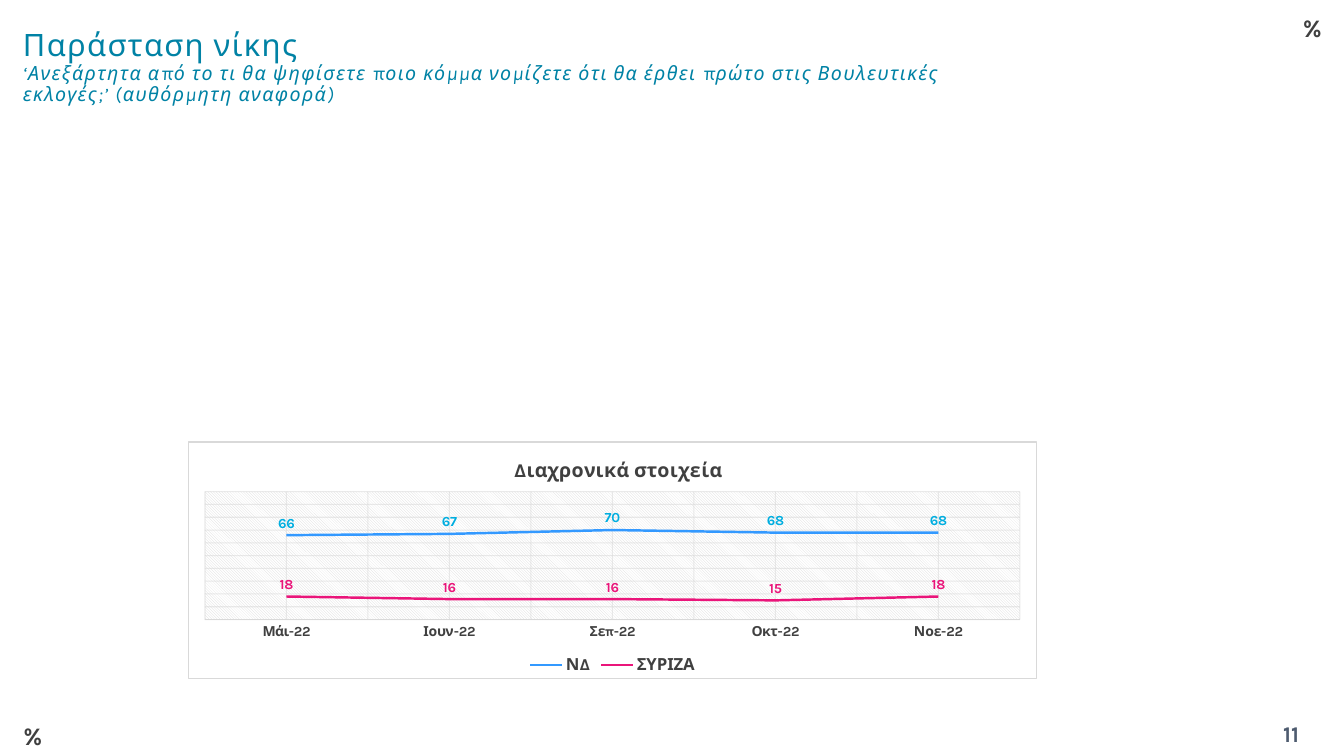
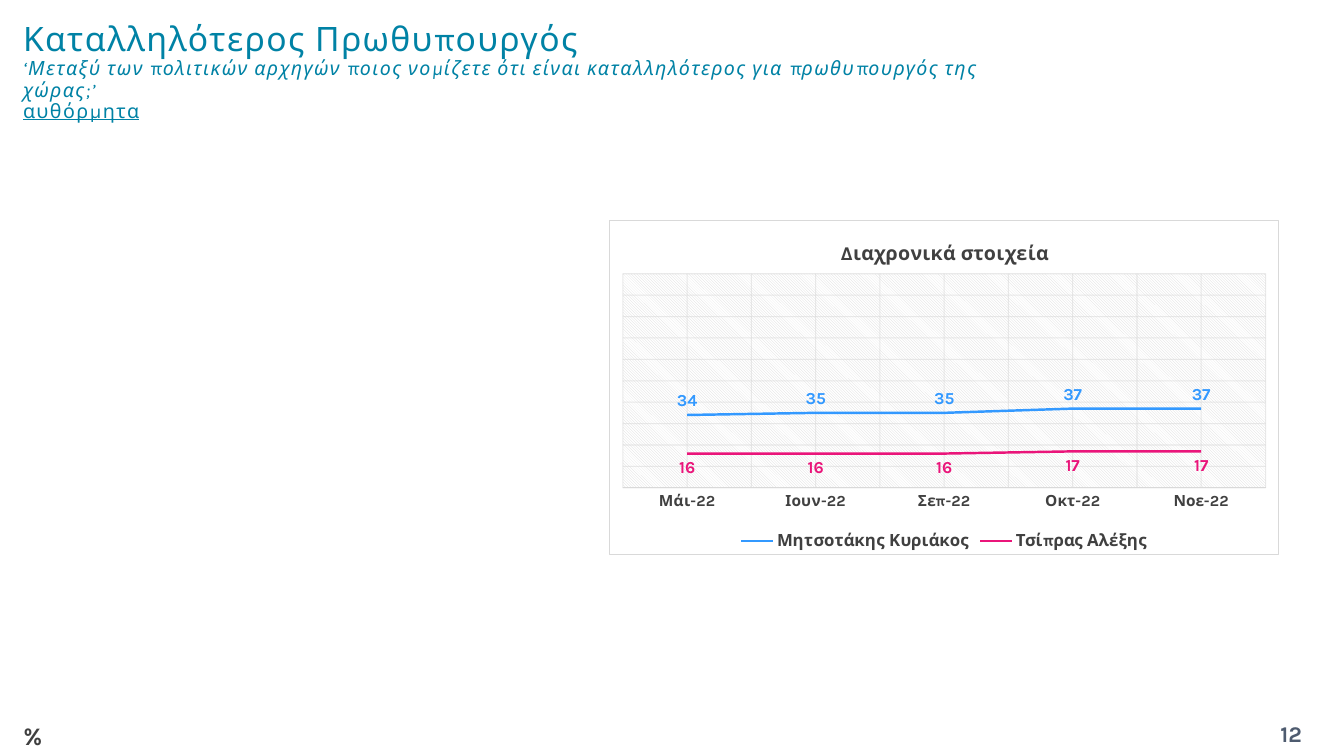
from copy import deepcopy
from dataclasses import dataclass

from lxml import etree
from pptx import Presentation
from pptx.chart.data import CategoryChartData
from pptx.dml.color import RGBColor
from pptx.enum import chart as ch, dml, text as tx
from pptx.oxml import parse_xml
from pptx.oxml.ns import nsdecls, qn
from pptx.util import Inches, Pt


@dataclass(frozen=True)
class Theme:
    font: str = "Karla"
    teal: str = "0082A5"
    slate: str = "4E5B6F"
    dark: str = "404040"
    gray: str = "808080"
    grid: str = "D9D9D9"
    white: str = "FFFFFF"
    blue: str = "3399FF"
    cyan: str = "00AEE0"
    pink: str = "EA157A"
    question: int = 14
    chart_title: int = 14
    legend: int = 12
    percent: int = 18
    number: int = 16


T = Theme()
MONTHS = ["Μάι-22", "Ιουν-22", "Σεπ-22", "Οκτ-22", "Νοε-22"]
CHART_TITLE = "Διαχρονικά στοιχεία"
ABOVE, BELOW = ch.XL_LABEL_POSITION.ABOVE, ch.XL_LABEL_POSITION.BELOW
PERCENT_FOOTER = (0.13, 7.1, 0.71, 0.4)
PERCENT_CORNER = (12.82, 0.07, 0.71, 0.44)
NUMBER_BOX = (12.28, 7.1, 1.05, 0.4)

# series: name, values, line colour, label colour, label position
SLIDES = [
    dict(
        number="11",
        heading_box=(0.13, 0.48, 9.66, 0.39),
        heading=[
            ("Παράσταση νίκης", dict(size=22)),
            ("‘Ανεξάρτητα από το τι θα ψηφίσετε ποιο κόμμα νομίζετε ότι θα έρθει "
             "πρώτο στις Βουλευτικές εκλογές;’ (αυθόρμητη αναφορά)", dict(italic=True)),
        ],
        percents=[PERCENT_CORNER, PERCENT_FOOTER],
        chart_box=(1.86, 4.38, 8.43, 2.36),
        title_at=(0.38, 0.05),
        plot=(0.02, 0.21, 0.96, 0.54),
        label_size=10,
        month_size=10,
        series=[
            ("ΝΔ", [66, 67, 70, 68, 68], T.blue, T.cyan, ABOVE),
            ("ΣΥΡΙΖΑ", [18, 16, 16, 15, 18], T.pink, T.pink, ABOVE),
        ],
    ),
    dict(
        number="12",
        heading_box=(0.13, 0.13, 9.82, 1.18),
        heading=[
            ("Καταλληλότερος Πρωθυπουργός", dict(size=24)),
            ("‘Μεταξύ των πολιτικών αρχηγών ποιος νομίζετε ότι είναι καταλληλότερος "
             "για πρωθυπουργός της χώρας;’", dict(italic=True)),
            ("αυθόρμητα", dict(underline=True)),
        ],
        percents=[PERCENT_FOOTER],
        chart_box=(6.04, 2.18, 6.65, 3.33),
        title_at=(0.34, 0.05),
        plot=(0.02, 0.16, 0.96, 0.64),
        label_size=12,
        month_size=11,
        series=[
            ("Μητσοτάκης Κυριάκος", [34, 35, 35, 37, 37], T.blue, T.blue, ABOVE),
            ("Τσίπρας Αλέξης", [16, 16, 16, 17, 17], T.pink, T.pink, BELOW),
        ],
    ),
]


def rgb(colour):
    return RGBColor.from_string(colour)


def inches(box):
    return [Inches(length) for length in box]


def style_font(font, size, colour, bold=False, italic=False, underline=False):
    font.name, font.size, font.bold = T.font, Pt(size), bold
    font.italic, font.underline = italic, underline
    font.color.rgb = rgb(colour)


def add_text(slide, box, lines, size, colour, bold=False, align=None,
             anchor=tx.MSO_ANCHOR.TOP, leading=None, tracking=None, hatched=False):
    """Write (words, format) lines as one paragraph with line breaks."""
    frame = slide.shapes.add_textbox(*inches(box)).text_frame
    frame.word_wrap, frame.vertical_anchor = True, anchor
    paragraph = frame.paragraphs[0]
    paragraph.alignment, paragraph.line_spacing = align, leading
    for index, (words, extra) in enumerate(lines):
        if index:
            paragraph.add_line_break()
        run = paragraph.add_run()
        run.text = words
        style_font(run.font, **(dict(size=size, colour=colour, bold=bold) | extra))
        if tracking:
            run.font._element.set("spc", str(tracking))
        if hatched:
            fill = run.font.fill
            fill.patterned()
            fill.pattern = dml.MSO_PATTERN.DARK_UPWARD_DIAGONAL
            fill.fore_color.rgb, fill.back_color.rgb = rgb(T.gray), rgb(colour)


def style_line(line, colour, width, alpha=None):
    line.width = Pt(width)
    line.color.rgb = rgb(colour)
    if alpha:
        for clr in line._get_or_add_ln().iter(qn("a:srgbClr")):
            etree.SubElement(clr, qn("a:alpha")).set("val", str(alpha * 1000))


def manual_layout(**settings):
    children = "".join(f'<c:{key} val="{value}"/>' for key, value in settings.items())
    return parse_xml(f'<c:layout {nsdecls("c")}><c:manualLayout>{children}'
                     '</c:manualLayout></c:layout>')


def set_chart_areas(chart, plot):
    """Fill the chart and plot areas, and fix the place of the plot."""
    space = chart._chartSpace
    space.find(qn("c:chart")).addnext(parse_xml(
        f'<c:spPr {nsdecls("c", "a")}>'
        f'<a:solidFill><a:srgbClr val="{T.white}"/></a:solidFill>'
        f'<a:ln w="{Pt(0.75)}"><a:solidFill><a:srgbClr val="{T.grid}"/></a:solidFill></a:ln>'
        '</c:spPr>'))
    area = space.find(".//" + qn("c:plotArea"))
    for layout in area.findall(qn("c:layout")):
        area.remove(layout)
    x, y, w, h = plot
    area.insert(0, manual_layout(layoutTarget="inner", xMode="edge", yMode="edge",
                                 x=x, y=y, w=w, h=h))
    area.append(parse_xml(
        f'<c:spPr {nsdecls("c", "a")}><a:pattFill prst="ltDnDiag">'
        f'<a:fgClr><a:srgbClr val="{T.grid}"/></a:fgClr>'
        f'<a:bgClr><a:srgbClr val="{T.white}"/></a:bgClr></a:pattFill></c:spPr>'))


def set_title(chart, position):
    chart.has_title = True
    title = chart.chart_title
    title.include_in_layout = False
    run = title.text_frame.paragraphs[0].add_run()
    run.text = CHART_TITLE
    style_font(run.font, T.chart_title, T.dark, bold=True)
    element = title._element
    for layout in element.findall(qn("c:layout")):
        element.remove(layout)
    x, y = position
    element.find(qn("c:tx")).addnext(manual_layout(xMode="edge", yMode="edge", x=x, y=y))


def set_axes(chart, month_size):
    months, values = chart.category_axis, chart.value_axis
    months.major_tick_mark = months.minor_tick_mark = ch.XL_TICK_MARK.NONE
    style_font(months.tick_labels.font, month_size, T.dark, bold=True)
    style_line(months.format.line, T.grid, 0.75)
    values.minimum_scale, values.maximum_scale, values.major_unit = 0, 100, 10
    values.visible = False
    for axis in (months, values):
        axis.has_major_gridlines = True
        style_line(axis.major_gridlines.format.line, T.grid, 0.75, alpha=54)
    months.has_minor_gridlines = True
    month_axis = months._element
    month_axis.find(qn("c:minorGridlines")).append(
        deepcopy(month_axis.find(qn("c:majorGridlines")).find(qn("c:spPr"))))


def add_trend(slide, content):
    data = CategoryChartData()
    data.categories = MONTHS
    for name, values, *_ in content["series"]:
        data.add_series(name, values)
    chart = slide.shapes.add_chart(
        ch.XL_CHART_TYPE.LINE, *inches(content["chart_box"]), data).chart
    style_font(chart.font, 10, "000000")
    set_chart_areas(chart, content["plot"])
    set_title(chart, content["title_at"])
    set_axes(chart, content["month_size"])
    chart.has_legend = True
    chart.legend.position = ch.XL_LEGEND_POSITION.BOTTOM
    chart.legend.include_in_layout = False
    style_font(chart.legend.font, T.legend, T.dark, bold=True)
    plot = chart.plots[0]
    plot.vary_by_categories = False
    for series, (_, _, colour, label_colour, position) in zip(plot.series, content["series"]):
        series.smooth = False
        style_line(series.format.line, colour, 1.75)
        labels = series.data_labels
        labels.show_value, labels.position = True, position
        style_font(labels.font, content["label_size"], label_colour, bold=True)


def main():
    prs = Presentation()
    prs.slide_width, prs.slide_height = Inches(13.33), Inches(7.5)
    for content in SLIDES:
        slide = prs.slides.add_slide(prs.slide_layouts[6])
        add_text(slide, content["heading_box"], content["heading"], T.question, T.teal,
                 anchor=tx.MSO_ANCHOR.MIDDLE, leading=0.9, tracking=100)
        for box in content["percents"]:
            add_text(slide, box, [("%", {})], T.percent, T.dark, bold=True, hatched=True)
        add_text(slide, NUMBER_BOX, [(content["number"], {})], T.number, T.slate,
                 bold=True, align=tx.PP_ALIGN.CENTER)
        add_trend(slide, content)
    prs.save("out.pptx")


if __name__ == "__main__":
    main()
